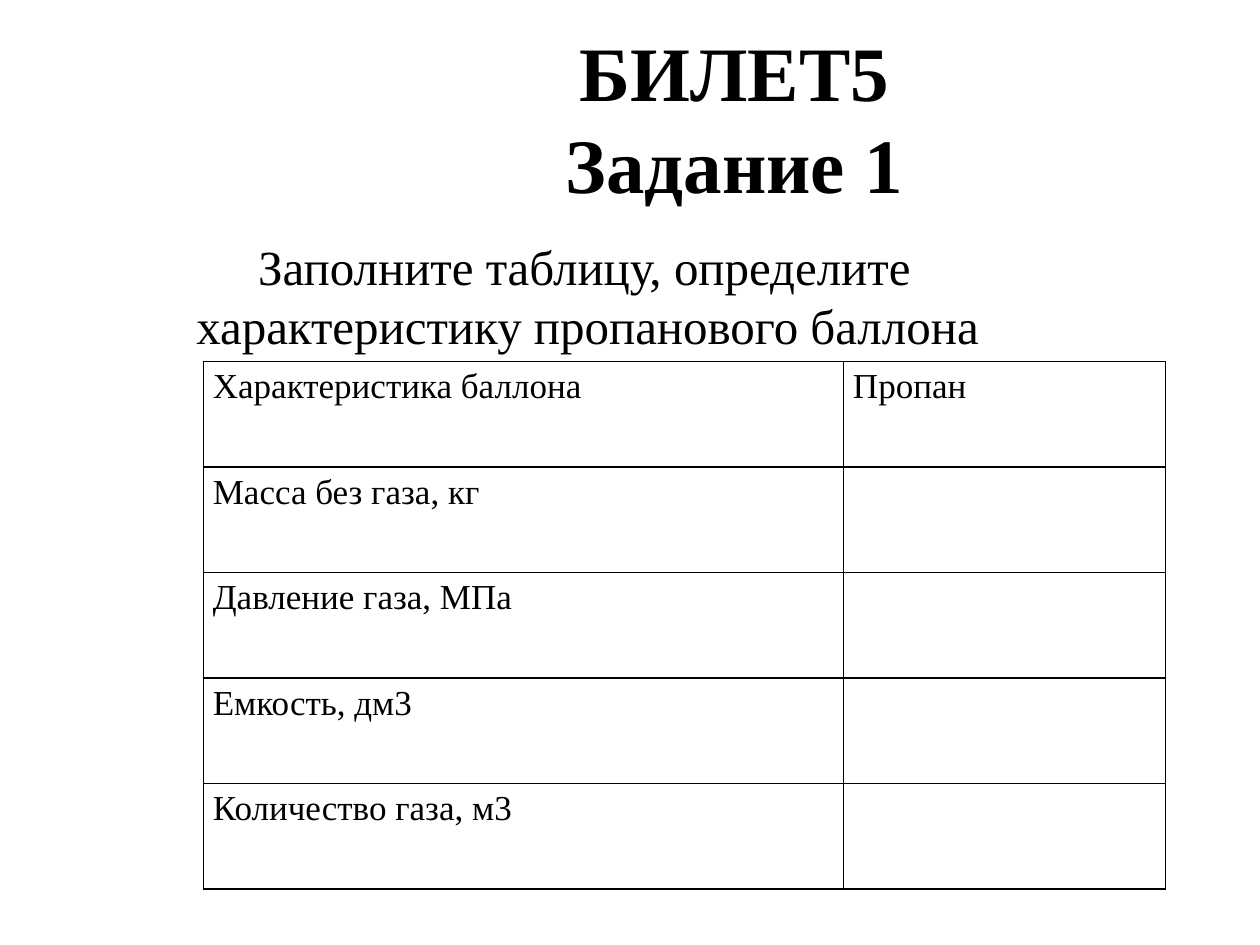
"""Build the exam ticket slide with a propane cylinder table to fill in."""
from lxml import etree
from pptx import Presentation
from pptx.dml.color import RGBColor
from pptx.enum.text import MSO_ANCHOR, MSO_AUTO_SIZE, PP_ALIGN
from pptx.oxml.ns import qn
from pptx.util import Pt

MIDDLE = MSO_ANCHOR.MIDDLE
NO_FIT = MSO_AUTO_SIZE.NONE
CENTER = PP_ALIGN.CENTER

FONT = "Times New Roman"
COLORS = {"text": "000000", "border": "000000", "panel": "FFFFFF"}
TITLE = "БИЛЕТ5\vЗадание 1"
TASK = "Заполните таблицу, определите характеристику пропанового баллона"
ROWS = [
    ("Характеристика баллона", "Пропан"),
    ("Масса без газа, кг", ""),
    ("Давление газа, МПа", ""),
    ("Емкость, дм3", ""),
    ("Количество газа, м3", ""),
]
COL_WIDTHS = (365.8, 184)
ROW_HEIGHT = 60.3


def style(p, size, bold=False):
    p.font.name = FONT
    p.font.size = Pt(size)
    p.font.bold = bold
    p.font.color.rgb = RGBColor.from_string(COLORS["text"])


def add_borders(cell):
    tc_pr = cell._tc.get_or_add_tcPr()
    for i, side in enumerate(("lnL", "lnR", "lnT", "lnB")):
        ln = etree.Element(qn(f"a:{side}"), w=str(Pt(1)))
        fill = etree.SubElement(ln, qn("a:solidFill"))
        etree.SubElement(fill, qn("a:srgbClr"), val=COLORS["border"])
        tc_pr.insert(i, ln)


def add_title(s):
    sp = s.shapes.title
    sp.left, sp.top, sp.width, sp.height = Pt(139), Pt(21.6), Pt(561.6), Pt(90)
    panel = RGBColor.from_string(COLORS["panel"])
    sp.fill.solid()
    sp.fill.fore_color.rgb = panel
    color = sp._element.spPr.find(qn("a:solidFill")).find(qn("a:srgbClr"))
    etree.SubElement(color, qn("a:alpha"), val="90000")
    sp.line.color.rgb = panel
    sp.line.width = Pt(1.5)
    tf = sp.text_frame
    tf.text = TITLE
    tf.auto_size = NO_FIT
    tf.vertical_anchor = MIDDLE
    p = tf.paragraphs[0]
    p.alignment = CENTER
    style(p, 44, True)


def add_task(s):
    tf = s.shapes.add_textbox(Pt(105.1), Pt(131.4), Pt(595.4), Pt(74.9)).text_frame
    tf.word_wrap = True
    tf.vertical_anchor = MIDDLE
    p = tf.paragraphs[0]
    p.text = TASK
    p._p.get_or_add_pPr().set("indent", str(Pt(35.3)))
    style(p, 28)


def add_table(s):
    table = s.shapes.add_table(
        len(ROWS), len(COL_WIDTHS), Pt(116.25), Pt(206.6),
        Pt(sum(COL_WIDTHS)), Pt(ROW_HEIGHT * len(ROWS))).table
    table.first_row = table.horz_banding = False
    for col, width in zip(table.columns, COL_WIDTHS):
        col.width = Pt(width)
    for row, texts in zip(table.rows, ROWS):
        row.height = Pt(ROW_HEIGHT)
        for cell, text in zip(row.cells, texts):
            cell.fill.background()
            add_borders(cell)
            cell.margin_left = cell.margin_right = Pt(5.4)
            cell.margin_top = cell.margin_bottom = 0
            p = cell.text_frame.paragraphs[0]
            p.text = text
            p.line_spacing = 1.15
            p.space_after = Pt(10)
            style(p, 20)


def main():
    prs = Presentation()
    prs.slide_width, prs.slide_height = Pt(720), Pt(540)
    s = prs.slides.add_slide(prs.slide_layouts[5])
    add_title(s)
    add_table(s)
    add_task(s)
    prs.save("out.pptx")


if __name__ == "__main__":
    main()
